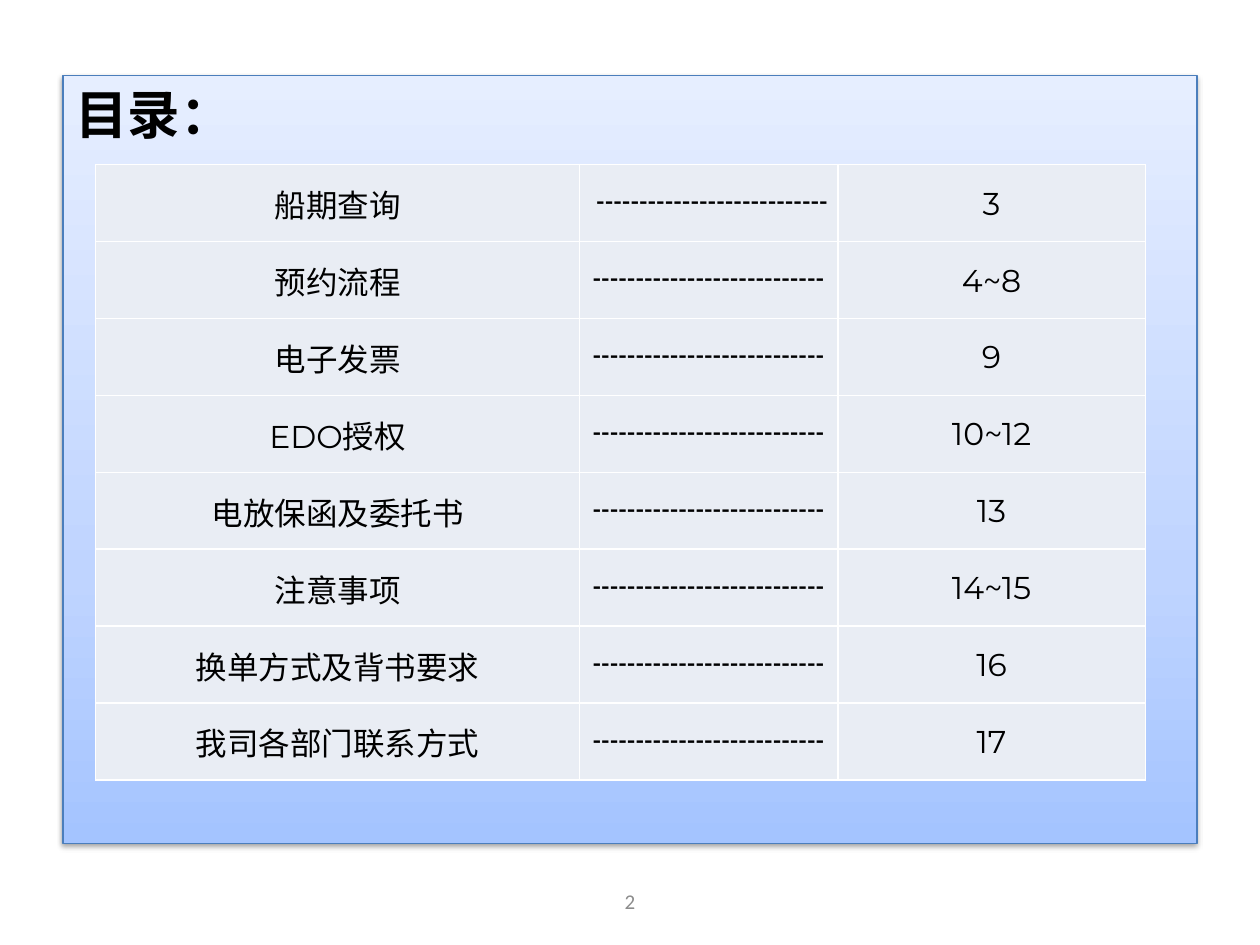
from copy import deepcopy
from dataclasses import dataclass

from lxml.etree import SubElement
from pptx import Presentation
from pptx.dml.color import RGBColor
from pptx.enum.shapes import MSO_SHAPE
from pptx.enum.text import MSO_ANCHOR, PP_ALIGN
from pptx.oxml import parse_xml
from pptx.oxml.ns import qn
from pptx.util import Cm, Pt

NS = 'xmlns:a="http://schemas.openxmlformats.org/drawingml/2006/main"'


@dataclass(frozen=True)
class Theme:
    """Colours, fonts and type sizes of the deck."""
    ink: str = "000000"
    muted: str = "8C8C8C"
    cell: str = "E9EDF4"
    grid: str = "FFFFFF"
    outline: str = "4B7EBC"
    gradient: tuple = ((0, "A4C4FF"), (0.35, "BFD4FF"), (1, "E6EEFF"))
    heading_font: str = "Calibri"
    body_font: str = "Montserrat"
    leader_font: str = "Arial Narrow"
    heading_size: int = 30
    body_size: int = 18
    footer_size: int = 12


THEME = Theme()
LEADER = "-" * 27
CONTENTS = [
    ("船期查询", "3"),
    ("预约流程", "4~8"),
    ("电子发票", "9"),
    ("EDO授权", "10~12"),
    ("电放保函及委托书", "13"),
    ("注意事项", "14~15"),
    ("换单方式及背书要求", "16"),
    ("我司各部门联系方式", "17"),
]


def set_attrs(obj, values):
    """Set each attribute named in a dict of format values."""
    for name, value in values.items():
        setattr(obj, name, value)


def write(tf, text, font, size, color=THEME.ink, bold=False, align=PP_ALIGN.CENTER):
    """Write one formatted run and return its paragraph."""
    p = tf.paragraphs[0]
    p.alignment = align
    r = p.add_run()
    r.text = text
    set_attrs(r.font, {"name": font, "size": Pt(size), "bold": bold})
    r.font.color.rgb = RGBColor.from_string(color)
    return p


def fill_gradient(shape, stops):
    """Fill a shape with an upward gradient of the given stops."""
    shape.fill.gradient()
    shape.fill.gradient_angle = 90
    gs_list = shape._element.spPr.find(qn("a:gradFill")).find(qn("a:gsLst"))
    while len(gs_list) < len(stops):
        gs_list.append(deepcopy(gs_list[-1]))
    for stop, (position, color) in zip(shape.fill.gradient_stops, stops):
        stop.position = position
        stop.color.rgb = RGBColor.from_string(color)


def add_shadow(shape):
    """Give a shape a soft shadow that falls downward."""
    shape.shadow.inherit = False
    effects = shape._element.spPr.find(qn("a:effectLst"))
    effects.append(parse_xml(
        f'<a:outerShdw {NS} blurRad="{Pt(3.1)}" dist="{Pt(1.6)}" dir="5400000" rotWithShape="0">'
        '<a:srgbClr val="000000"><a:alpha val="38000"/></a:srgbClr></a:outerShdw>'))


def set_borders(cell, color, width):
    """Draw the four borders of a table cell."""
    tc_pr = cell._tc.get_or_add_tcPr()
    for i, side in enumerate(("lnL", "lnR", "lnT", "lnB")):
        ln = parse_xml(f'<a:{side} {NS} w="{Pt(width)}"/>')
        SubElement(SubElement(ln, qn("a:solidFill")), qn("a:srgbClr"), val=color)
        tc_pr.insert(i, ln)


def add_contents_table(slide, left, top, width, height):
    """Place the table of topics, leaders and page numbers."""
    table = slide.shapes.add_table(len(CONTENTS), 3, left, top, width, height).table
    set_attrs(table, {"first_row": False, "horz_banding": False})
    for column, share in zip(table.columns, (0.461, 0.246, 0.293)):
        column.width = int(width * share)
    for row in table.rows:
        row.height = height // len(CONTENTS)
    fonts = (THEME.body_font, THEME.leader_font, THEME.body_font)
    margin = Cm(0.03)
    layout = {"vertical_anchor": MSO_ANCHOR.MIDDLE, "margin_left": margin,
              "margin_right": margin, "margin_top": margin, "margin_bottom": 0}
    for i, (topic, pages) in enumerate(CONTENTS):
        leader = LEADER if i else " " + LEADER
        for j, (text, font) in enumerate(zip((topic, leader, pages), fonts)):
            cell = table.cell(i, j)
            set_attrs(cell, layout)
            cell.fill.solid()
            cell.fill.fore_color.rgb = RGBColor.from_string(THEME.cell)
            set_borders(cell, THEME.grid, 1)
            write(cell.text_frame, text, font, THEME.body_size)


def add_contents_panel(slide, left, top, width, height):
    """Place the shaded panel with its heading and contents table."""
    s = slide.shapes.add_shape(MSO_SHAPE.RECTANGLE, left, top, width, height)
    fill_gradient(s, THEME.gradient)
    s.line.color.rgb = RGBColor.from_string(THEME.outline)
    s.line.width = Pt(0.75)
    add_shadow(s)
    set_attrs(s.text_frame, {"word_wrap": True, "vertical_anchor": MSO_ANCHOR.TOP})
    p = write(s.text_frame, "目录：", THEME.heading_font, THEME.heading_size,
              bold=True, align=PP_ALIGN.LEFT)
    p.space_before = Pt(THEME.heading_size * 0.2)
    add_contents_table(slide, left + Cm(0.66), top + Cm(1.8),
                       width - Cm(1.7), height - Cm(3.09))


def add_page_number(slide, left, top, width, height, number):
    """Place the page number in its footer box."""
    tf = slide.shapes.add_textbox(left, top, width, height).text_frame
    set_attrs(tf, {"word_wrap": True, "vertical_anchor": MSO_ANCHOR.MIDDLE})
    write(tf, str(number), THEME.heading_font, THEME.footer_size, THEME.muted)


def main():
    """Build the contents slide and save it."""
    prs = Presentation()
    set_attrs(prs, {"slide_width": Cm(25.4), "slide_height": Cm(19.05)})
    slide = prs.slides.add_slide(prs.slide_layouts[6])
    add_contents_panel(slide, Cm(1.27), Cm(1.52), Cm(22.86), Cm(15.49))
    add_page_number(slide, Cm(8.68), Cm(17.65), Cm(8.04), Cm(1.02), 2)
    prs.save("out.pptx")


if __name__ == "__main__":
    main()
